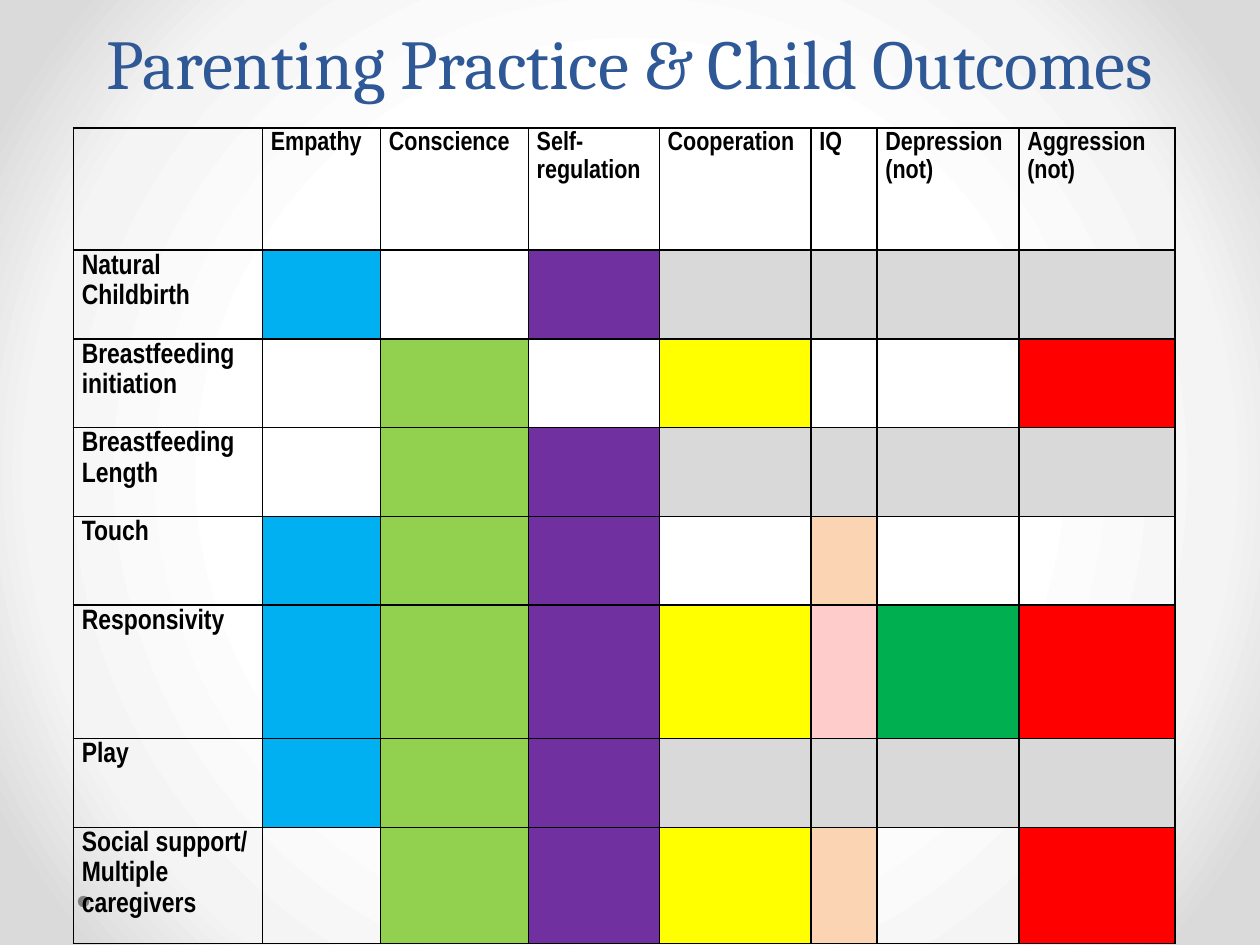
import pptx
import pptx.dml.color
import pptx.enum.shapes
import pptx.enum.text
import pptx.oxml
import pptx.oxml.ns
import pptx.util
from dataclasses import dataclass
from typing import Any

Cm = pptx.util.Cm

COLOURS = {
    "title": "2F5897", "ink": "000000", "dot": "808080",
    "blue": "00B0F0", "lime": "92D050", "purple": "7030A0",
    "yellow": "FFFF00", "peach": "FBD4B4", "pink": "FFCCCC",
    "green": "00B050", "red": "FF0000", "grey": "D9D9D9", "white": "FFFFFF",
}
BACKDROP_STOPS = [(50, "FFFFFF"), (76, "F4F4F4"), (92, "DADADA")]
COLUMN_WIDTHS = [3.81, 2.38, 2.98, 2.64, 3.06, 1.33, 2.86, 3.15]
HEADER_HEIGHT = 2.46
OUTCOMES = ["", "Empathy", "Conscience", "Self-regulation", "Cooperation",
            "IQ", "Depression (not)", "Aggression (not)"]
UNTESTED = ["grey"] * 4


@dataclass
class Practice:
    """A parenting practice and the colour of each outcome cell."""
    name: str
    fills: list[str]
    height: float = 1.79


PRACTICES = [
    Practice("Natural Childbirth", ["blue", "white", "purple", *UNTESTED]),
    Practice("Breastfeeding initiation", ["", "lime", "", "yellow", "white", "", "red"]),
    Practice("Breastfeeding Length", ["", "lime", "purple", *UNTESTED]),
    Practice("Touch", ["blue", "lime", "purple", "", "peach", "", ""]),
    Practice("Responsivity", ["blue", "lime", "purple", "yellow", "pink", "green", "red"], 2.69),
    Practice("Play", ["blue", "lime", "purple", *UNTESTED]),
    Practice("Social support/ Multiple caregivers",
             ["", "lime", "purple", "yellow", "peach", "", "red"], 2.34),
]


def colour(name: str) -> pptx.dml.color.RGBColor:
    """Return the named colour."""
    return pptx.dml.color.RGBColor.from_string(COLOURS[name])


def write(frame: Any, text: str, *, size: float, font: str, ink: str,
          bold: bool = False, align: Any = None, spacing: Any = None) -> None:
    """Put one formatted paragraph into a text frame."""
    para = frame.paragraphs[0]
    para.alignment = align
    para.line_spacing = spacing
    span = para.add_run()
    span.text = text
    span.font.size = pptx.util.Pt(size)
    span.font.name = font
    span.font.bold = bold
    span.font.color.rgb = colour(ink)


def paint_backdrop(page: Any) -> None:
    """Fill the page with a radial gradient."""
    page.background.fill.gradient()
    gradient = page.background._cSld.find(".//" + pptx.oxml.ns.qn("a:gradFill"))
    stops = "".join(f'<a:gs pos="{place * 1000}"><a:srgbClr val="{value}"/></a:gs>'
                    for place, value in BACKDROP_STOPS)
    radial = pptx.oxml.parse_xml(
        f'<a:gradFill {pptx.oxml.ns.nsdecls("a")} rotWithShape="1"><a:gsLst>{stops}</a:gsLst>'
        '<a:path path="circle"><a:fillToRect l="50000" t="50000" r="50000" b="50000"/>'
        '</a:path></a:gradFill>')
    gradient.getparent().replace(gradient, radial)


def add_title(page: Any) -> None:
    """Add the heading across the top."""
    box = page.shapes.add_textbox(0, 0, Cm(25.4), Cm(2.21))
    box.text_frame.word_wrap = True
    box.text_frame.vertical_anchor = pptx.enum.text.MSO_ANCHOR.BOTTOM
    write(box.text_frame, "Parenting Practice & Child Outcomes", size=40, font="Cambria",
          ink="title", align=pptx.enum.text.PP_ALIGN.CENTER, spacing=pptx.util.Pt(58))


def add_dot(page: Any) -> None:
    """Add the small footer dot."""
    dot = page.shapes.add_shape(pptx.enum.shapes.MSO_SHAPE.OVAL,
                                Cm(1.57), Cm(18.06), Cm(0.23), Cm(0.23))
    dot.shadow.inherit = False
    dot.fill.solid()
    dot.fill.fore_color.rgb = colour("dot")
    dot.line.fill.background()


def style_cell(cell: Any, fill: str = "") -> None:
    """Give a cell its margins, borders and fill."""
    cell.margin_left = cell.margin_right = Cm(0.17)
    cell.margin_top = cell.margin_bottom = 0
    properties = cell._tc.get_or_add_tcPr()
    for side in ("lnL", "lnR", "lnT", "lnB"):
        properties.append(pptx.oxml.parse_xml(
            f'<a:{side} {pptx.oxml.ns.nsdecls("a")} w="12700"><a:solidFill>'
            f'<a:srgbClr val="{COLOURS["ink"]}"/></a:solidFill></a:{side}>'))
    if fill:
        cell.fill.solid()
        cell.fill.fore_color.rgb = colour(fill)
    else:
        cell.fill.background()


def label_cell(cell: Any, text: str, size: float) -> None:
    """Write a bold row or column heading."""
    style_cell(cell)
    if text:
        write(cell.text_frame, text, size=size, font="Arial Narrow",
              ink="ink", bold=True, spacing=1.15)


def add_outcome_table(page: Any) -> None:
    """Add the grid of practices against outcomes."""
    heights = [HEADER_HEIGHT] + [practice.height for practice in PRACTICES]
    table = page.shapes.add_table(len(heights), len(COLUMN_WIDTHS), Cm(1.48), Cm(2.58),
                                  Cm(sum(COLUMN_WIDTHS)), Cm(sum(heights))).table
    table.first_row = table.horz_banding = False
    for column, width in zip(table.columns, COLUMN_WIDTHS):
        column.width = Cm(width)
    for row, height in zip(table.rows, heights):
        row.height = Cm(height)
    for index, outcome in enumerate(OUTCOMES):
        label_cell(table.cell(0, index), outcome, 15)
    for line, practice in enumerate(PRACTICES, 1):
        label_cell(table.cell(line, 0), practice.name, 16)
        for index, fill in enumerate(practice.fills, 1):
            style_cell(table.cell(line, index), fill)


def main() -> None:
    """Build and save the deck."""
    deck = pptx.Presentation()
    deck.slide_width, deck.slide_height = Cm(25.4), Cm(19.05)
    page = deck.slides.add_slide(deck.slide_layouts[6])
    paint_backdrop(page)
    add_dot(page)
    add_title(page)
    add_outcome_table(page)
    deck.save("out.pptx")


if __name__ == "__main__":
    main()
